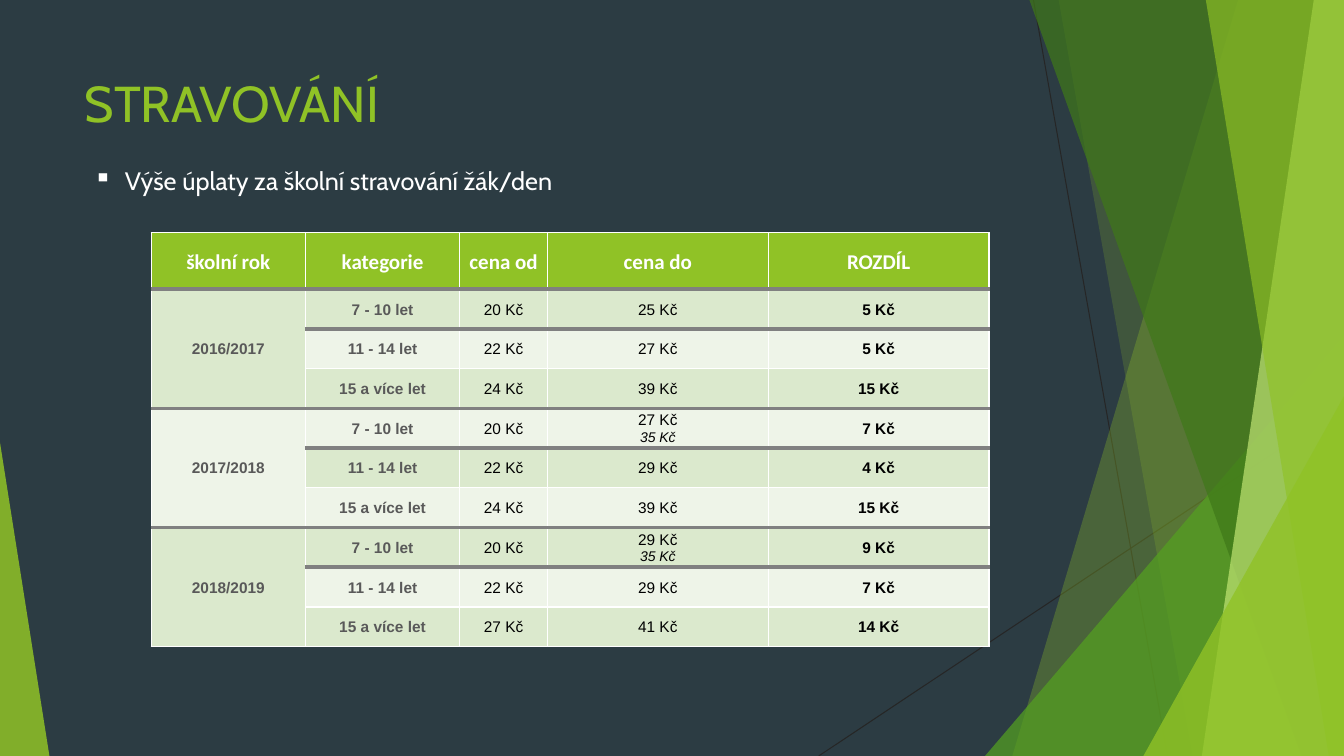
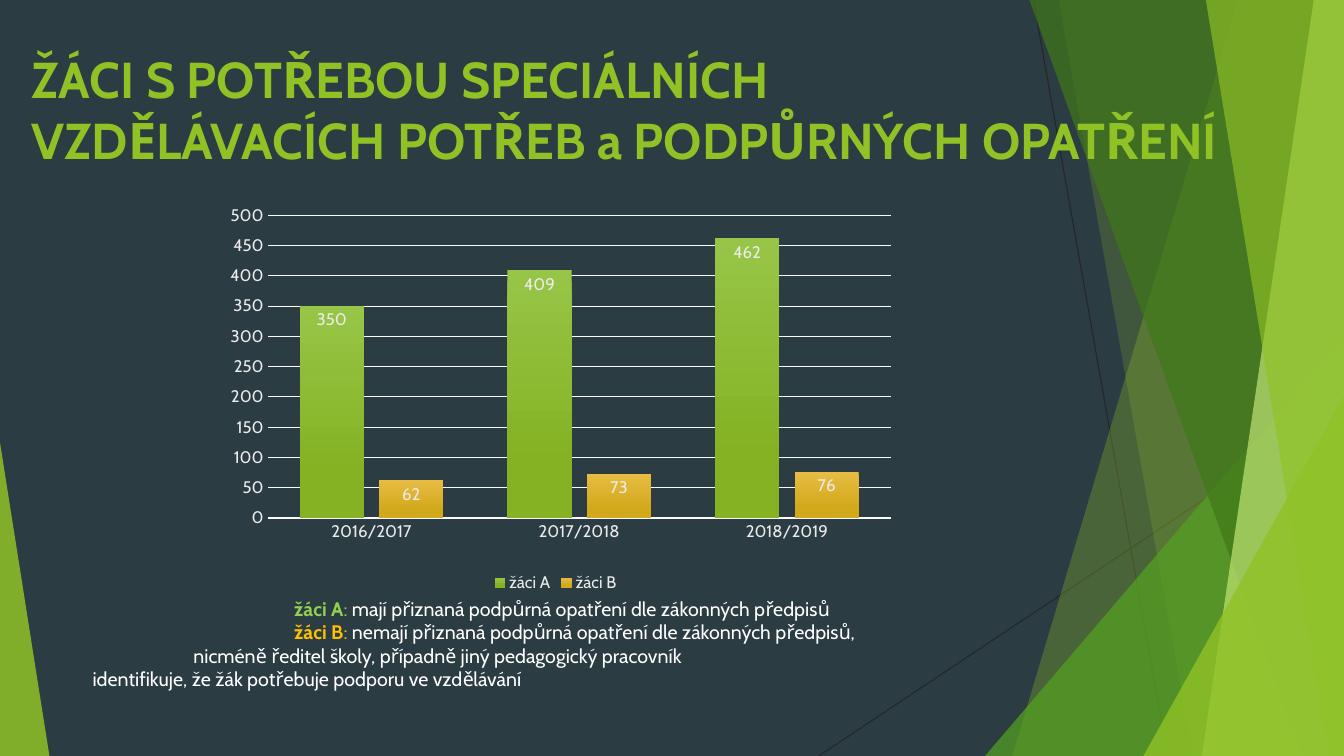
from lxml.etree import SubElement
from pptx import Presentation
from pptx.chart.data import CategoryChartData
from pptx.dml.color import RGBColor
from pptx.enum.chart import XL_CHART_TYPE as ChartType
from pptx.enum.chart import XL_LABEL_POSITION as LabelPosition
from pptx.enum.chart import XL_LEGEND_POSITION as LegendPosition
from pptx.enum.chart import XL_TICK_MARK as TickMark
from pptx.enum.shapes import MSO_CONNECTOR as Connector
from pptx.enum.shapes import MSO_SHAPE as Shape
from pptx.enum.text import MSO_ANCHOR as Anchor
from pptx.enum.text import MSO_AUTO_SIZE as AutoSize
from pptx.enum.text import PP_ALIGN as Align
from pptx.oxml.ns import qn
from pptx.util import Inches, Pt

SLATE = RGBColor(0x2C, 0x3C, 0x43)
LIME = RGBColor(0x90, 0xC2, 0x26)
GREEN = RGBColor(0x54, 0xA0, 0x21)
FOREST = RGBColor(0x3F, 0x78, 0x19)
PALE_LIME = RGBColor(0xC0, 0xE4, 0x74)
CHARCOAL = RGBColor(0x26, 0x26, 0x26)
WHITE = RGBColor(0xFF, 0xFF, 0xFF)
BLACK = RGBColor(0x00, 0x00, 0x00)
GREY = RGBColor(0x80, 0x80, 0x80)
DARK_GREY = RGBColor(0x59, 0x59, 0x59)
BAND_DARK = RGBColor(0xDB, 0xE9, 0xCD)
BAND_LIGHT = RGBColor(0xEE, 0xF4, 0xE8)
LABEL = RGBColor(0xEB, 0xEB, 0xEB)
GRID = RGBColor(0xFC, 0xFC, 0xFC)
KEY_A = RGBColor(0x92, 0xD0, 0x50)
KEY_B = RGBColor(0xFF, 0xC0, 0x00)
BAR_A = (RGBColor(0x97, 0xC5, 0x47), RGBColor(0x84, 0xB2, 0x23))
BAR_B = (RGBColor(0xE7, 0xBC, 0x43), RGBColor(0xD2, 0xA9, 0x1B))

WIDTH, HEIGHT = 13.33, 7.5
RAYS = [((10.25, 0), (11.58, HEIGHT)), ((WIDTH, 4.03), (8.12, HEIGHT))]
FACETS = [
    ("band", (12.28, 10.04), LIME, 30),
    ("band", (10.5, 11.83), LIME, 20),
    ("triangle", (9.77, 3.33, 3.56, 1), GREEN, 72),
    ("band", (10.21, 12.91), FOREST, 70),
    ("band", (13.03, 11.92), PALE_LIME, 70),
    ("band", (11.96, 13.18), LIME, 65),
    ("triangle", (11.34, 3.93, 1.99, 1), LIME, 80),
    ("triangle", (0, 4.39, 0.49, 0), LIME, 85),
]

HEADINGS = ["školní rok", "kategorie", "cena od", "cena do", "ROZDÍL"]
COLUMN_WIDTHS = [1.53, 1.53, 0.87, 2.19, 2.19]
AGES = ["7 - 10 let", "11 - 14 let", "15 a více let"]
PRICES = {
    "2016/2017": [("20 Kč", "25 Kč", "5 Kč"), ("22 Kč", "27 Kč", "5 Kč"),
                  ("24 Kč", "39 Kč", "15 Kč")],
    "2017/2018": [("20 Kč", "27 Kč\n35 Kč", "7 Kč"), ("22 Kč", "29 Kč", "4 Kč"),
                  ("24 Kč", "39 Kč", "15 Kč")],
    "2018/2019": [("20 Kč", "29 Kč\n35 Kč", "9 Kč"), ("22 Kč", "29 Kč", "7 Kč"),
                  ("27 Kč", "41 Kč", "14 Kč")],
}
PUPILS = [("žáci A", (350, 409, 462), BAR_A), ("žáci B", (62, 73, 76), BAR_B)]
NOTES = [
    (2, "žáci A", KEY_A, " mají přiznaná podpůrná opatření dle zákonných předpisů"),
    (2, "žáci B", KEY_B, " nemají přiznaná podpůrná opatření dle zákonných předpisů,"),
    (1, "", WHITE, "nicméně ředitel školy, případně jiný pedagogický pracovník"),
    (0, "", WHITE, "identifikuje, že žák potřebuje podporu ve vzdělávání"),
]


def inches(*lengths):
    """Convert plain numbers to lengths."""
    return [Inches(length) for length in lengths]


def format_font(font, size, color, name="Cabin", bold=False, italic=False):
    """Apply the whole character format to a font."""
    font.size, font.name, font.bold, font.italic = Pt(size), name, bold, italic
    font.color.rgb = color


def write(paragraph, text, **style):
    """Append text to a paragraph in the given format."""
    run = paragraph.add_run()
    run.text = text
    format_font(run.font, **style)


def paragraph_at(frame, index):
    """Return the first paragraph or a new one after it."""
    return frame.add_paragraph() if index else frame.paragraphs[0]


def add_text_box(slide, box):
    """Add a wrapping text box and return its frame."""
    frame = slide.shapes.add_textbox(*inches(*box)).text_frame
    frame.word_wrap = True
    return frame


def add_facet(shapes, kind, place, color, opacity):
    """Draw one translucent facet of the backdrop."""
    if kind == "band":
        top, bottom = place
        outline = shapes.build_freeform(*inches(top, 0), scale=1.0)
        corners = [(WIDTH, 0), (WIDTH, HEIGHT), (bottom, HEIGHT)]
        outline.add_line_segments([inches(*corner) for corner in corners], close=True)
        facet = outline.convert_to_shape()
    else:
        left, top, width, apex = place
        facet = shapes.add_shape(Shape.ISOSCELES_TRIANGLE,
                                 *inches(left, top, width, HEIGHT - top))
        facet.adjustments[0] = apex
    facet.shadow.inherit = False
    facet.fill.solid()
    facet.fill.fore_color.rgb = color
    facet.line.fill.background()
    tint = facet.element.find(".//" + qn("a:srgbClr"))
    SubElement(tint, qn("a:alpha")).set("val", str(opacity * 1000))


def add_backdrop(master, slide):
    """Build the backdrop as a group and hand it to the slide master."""
    master.background.fill.solid()
    master.background.fill.fore_color.rgb = SLATE
    backdrop = slide.shapes.add_group_shape()
    for start, end in RAYS:
        ray = backdrop.shapes.add_connector(Connector.STRAIGHT, *inches(*start, *end))
        ray.line.color.rgb = CHARCOAL
        ray.line.width = Pt(0.75)
        SubElement(ray.element.spPr, qn("a:effectLst"))
    for facet in FACETS:
        add_facet(backdrop.shapes, *facet)
    for number, properties in enumerate(backdrop.element.iter(qn("p:cNvPr")), 20):
        properties.set("id", str(number))
    master.shapes.element.insert(2, backdrop.element)


def add_title(slide, box, lines, bold=False):
    """Place and format the slide title."""
    title = slide.shapes.title
    title.left, title.top, title.width, title.height = inches(*box)
    frame = title.text_frame
    frame.word_wrap = True
    frame.auto_size = AutoSize.NONE
    frame.vertical_anchor = Anchor.TOP
    paragraph = frame.paragraphs[0]
    paragraph.alignment = Align.LEFT
    for index, line in enumerate(lines):
        if index:
            paragraph.add_line_break()
        write(paragraph, line, size=36, color=LIME, bold=bold)


def add_bullet(slide, box, text):
    """Add a single bulleted line."""
    paragraph = add_text_box(slide, box).paragraphs[0]
    properties = paragraph._p.get_or_add_pPr()
    properties.set("marL", str(Inches(0.31)))
    properties.set("indent", str(-Inches(0.31)))
    SubElement(properties, qn("a:buChar")).set("char", "▪")
    write(paragraph, text, size=18, color=WHITE)


def set_borders(cell, thick_sides):
    """Draw white cell borders with thick grey ones on the named sides."""
    properties = cell._tc.get_or_add_tcPr()
    for index, side in enumerate(("lnL", "lnR", "lnT", "lnB")):
        thick = side in thick_sides
        border = SubElement(properties, qn("a:" + side), w=str(Pt(3 if thick else 1)))
        solid = SubElement(border, qn("a:solidFill"))
        SubElement(solid, qn("a:srgbClr")).set("val", str(GREY if thick else WHITE))
        properties.insert(index, border)


def fill_cell(cell, text, background, thick_sides, **style):
    """Fill one table cell; a second line is a smaller italic."""
    cell.fill.solid()
    cell.fill.fore_color.rgb = background
    cell.vertical_anchor = Anchor.MIDDLE
    cell.margin_left = cell.margin_right = Inches(0.07)
    cell.margin_top = cell.margin_bottom = 0
    for index, line in enumerate(text.split("\n")):
        paragraph = paragraph_at(cell.text_frame, index)
        paragraph.alignment = Align.CENTER
        paragraph.line_spacing = 1.07
        smaller = {"size": 10, "italic": True} if index else {}
        write(paragraph, line, **{**style, **smaller})
    set_borders(cell, thick_sides)


def is_thick(row, column):
    """Tell whether the rule below a row is thick in a column."""
    return row in (0, 3, 6) or (column > 0 and row in (1, 4, 7))


def add_price_table(slide, box):
    """Add the table of meal prices by school year and age."""
    rows = [HEADINGS]
    for year, prices in PRICES.items():
        for index, (age, price) in enumerate(zip(AGES, prices)):
            rows.append(["" if index else year, age, *price])
    table = slide.shapes.add_table(len(rows), len(HEADINGS), *inches(*box)).table
    for column, width in zip(table.columns, COLUMN_WIDTHS):
        column.width = Inches(width)
    header_height = 0.56
    body_height = (box[3] - header_height) / (len(rows) - 1)
    for index, row in enumerate(table.rows):
        row.height = Inches(body_height if index else header_height)
    for top in range(1, len(rows), len(AGES)):
        table.cell(top, 0).merge(table.cell(top + len(AGES) - 1, 0))
    for row, texts in enumerate(rows):
        for column, text in enumerate(texts):
            cell = table.cell(row, column)
            last_row = row + cell.span_height - 1 if cell.is_merge_origin else row
            thick_sides = [side for side, rule in (("lnT", row - 1), ("lnB", last_row))
                           if is_thick(rule, column)]
            if row == 0:
                background = LIME
                style = dict(size=15, name="Calibri", color=WHITE, bold=True)
            else:
                background = BAND_DARK if row % 2 else BAND_LIGHT
                style = dict(size=11, name="Arial", bold=column in (0, 1, 4),
                             color=DARK_GREY if column < 2 else BLACK)
            fill_cell(cell, text, background, thick_sides, **style)


def set_plot_layout(chart, left, top, width, height):
    """Fix the inner plot area as fractions of the chart."""
    plot_area = chart.element.find(".//" + qn("c:plotArea"))
    for old_layout in plot_area.findall(qn("c:layout")):
        plot_area.remove(old_layout)
    layout = SubElement(plot_area, qn("c:layout"))
    plot_area.insert(0, layout)
    manual = SubElement(layout, qn("c:manualLayout"))
    settings = dict(layoutTarget="inner", xMode="edge", yMode="edge",
                    x=left, y=top, w=width, h=height)
    for tag, value in settings.items():
        SubElement(manual, qn("c:" + tag)).set("val", str(value))


def add_pupil_chart(slide, box):
    """Add the column chart of pupils by school year."""
    data = CategoryChartData()
    data.categories = list(PRICES)
    for name, counts, _ in PUPILS:
        data.add_series(name, counts)
    chart = slide.shapes.add_chart(ChartType.COLUMN_CLUSTERED, *inches(*box), data).chart
    format_font(chart.font, size=10, color=WHITE)
    chart.has_title = False
    chart.has_legend = True
    chart.legend.position = LegendPosition.BOTTOM
    chart.legend.include_in_layout = False
    format_font(chart.legend.font, size=12, color=LABEL)
    years, counts = chart.category_axis, chart.value_axis
    for axis in (years, counts):
        axis.major_tick_mark = axis.minor_tick_mark = TickMark.NONE
        format_font(axis.tick_labels.font, size=12, color=LABEL)
    counts.minimum_scale, counts.maximum_scale, counts.major_unit = 0, 500, 50
    counts.format.line.fill.background()
    for line in (years.format.line, counts.major_gridlines.format.line):
        line.color.rgb = GRID
        line.width = Pt(0.75)
    plot = chart.plots[0]
    plot.gap_width, plot.overlap = 100, -24
    plot.vary_by_categories = False
    for series, (_, _, shades) in zip(plot.series, PUPILS):
        fill = series.format.fill
        fill.gradient()
        fill.gradient_angle = 270
        for stop, position, shade in zip(fill.gradient_stops, (0, 0.78), shades):
            stop.position = position
            stop.color.rgb = shade
        labels = series.data_labels
        labels.show_value = True
        labels.position = LabelPosition.INSIDE_END
        format_font(labels.font, size=12, color=LABEL)
    set_plot_layout(chart, 0.07, 0.03, 0.93, 0.77)


def add_notes_below(slide, box):
    """Explain the two groups of pupils in stepped lines."""
    frame = add_text_box(slide, box)
    for index, (indent, key, color, text) in enumerate(NOTES):
        paragraph = paragraph_at(frame, index)
        paragraph._p.get_or_add_pPr().set("marL", str(Inches(indent)))
        if key:
            write(paragraph, key, size=14, color=color, bold=True)
            write(paragraph, ":", size=14, color=color)
        write(paragraph, text, size=14, color=WHITE)


def build_meals_slide(slide):
    """Build the slide on meal prices."""
    add_title(slide, (0.74, 0.67, 9.4, 1.44), ["STRAVOVÁNÍ"])
    add_price_table(slide, (1.5, 2.31, 8.31, 4.11))
    add_bullet(slide, (0.83, 1.59, 6.17, 0.4), "Výše úplaty za školní stravování žák/den")


def build_pupils_slide(slide):
    """Build the slide on pupils with special needs."""
    add_title(slide, (0.21, 0.43, 12.03, 1.7),
              ["ŽÁCI S POTŘEBOU SPECIÁLNÍCH", "VZDĚLÁVACÍCH POTŘEB a PODPŮRNÝCH OPATŘENÍ"],
              bold=True)
    add_notes_below(slide, (0.82, 5.87, 9.4, 1.5))
    add_pupil_chart(slide, (2.19, 2.02, 6.65, 3.9))


def main():
    """Build and save the presentation."""
    deck = Presentation()
    deck.slide_width, deck.slide_height = inches(WIDTH, HEIGHT)
    title_only = deck.slide_layouts[5]
    meals, pupils = [deck.slides.add_slide(title_only) for _ in range(2)]
    add_backdrop(deck.slide_master, meals)
    build_meals_slide(meals)
    build_pupils_slide(pupils)
    deck.save("out.pptx")


if __name__ == "__main__":
    main()
